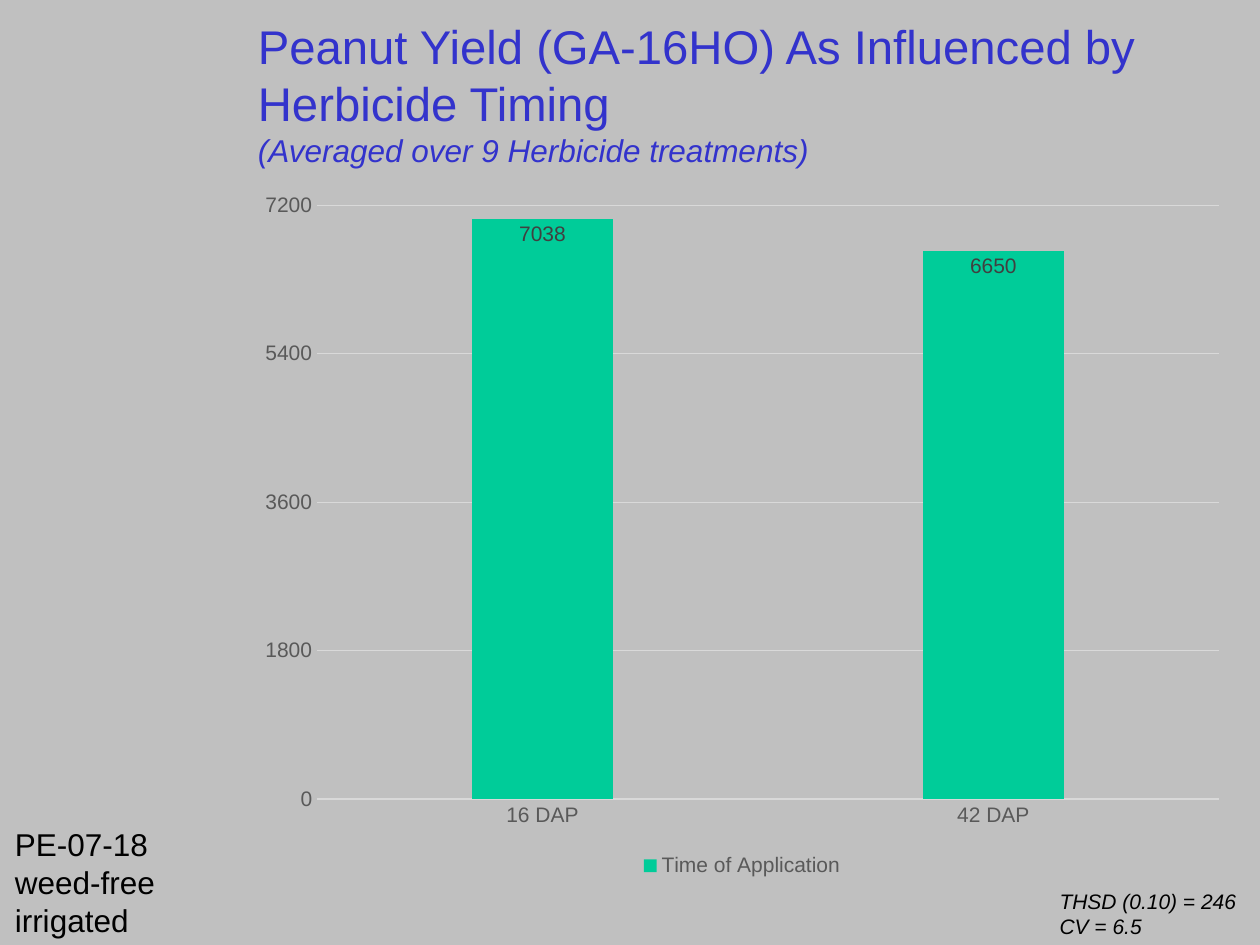
from pptx import Presentation
from pptx.chart.data import CategoryChartData
from pptx.dml.color import RGBColor
from pptx.enum.chart import XL_CHART_TYPE, XL_LABEL_POSITION, XL_LEGEND_POSITION, XL_TICK_MARK
from pptx.enum.text import MSO_ANCHOR, MSO_AUTO_SIZE
from pptx.util import Cm, Pt

GREY = RGBColor(0xC0, 0xC0, 0xC0)
BLUE = RGBColor(0x33, 0x33, 0xCC)
BLACK = RGBColor(0x00, 0x00, 0x00)
GREEN = RGBColor(0x00, 0xCC, 0x99)
GRID = RGBColor(0xD9, 0xD9, 0xD9)
AXIS_TEXT = RGBColor(0x59, 0x59, 0x59)
LABEL_TEXT = RGBColor(0x40, 0x40, 0x40)

TITLE_BOX = (4.95, 0.28, 20.24, 3.18)
CHART_BOX = (4.95, 3.63, 20.02, 14.15)
TRIAL_BOX = (0.05, 16.51, 3.38, 2.57)
STATS_BOX = (21.11, 17.78, 4.11, 1.27)


def set_font(font, size, color, **formats):
    font.color.rgb = color
    for name, value in {"name": "Arial", "size": Pt(size), **formats}.items():
        setattr(font, name, value)


def add_run(p, text, size, color, **formats):
    r = p.add_run()
    r.text = text
    set_font(r.font, size, color, **formats)


def add_title(s, box, heading, subtitle):
    tf = s.shapes.add_textbox(*map(Cm, box)).text_frame
    tf.word_wrap = True
    tf.vertical_anchor = MSO_ANCHOR.MIDDLE
    p = tf.paragraphs[0]
    add_run(p, heading, 27, BLUE)
    p.add_line_break()
    add_run(p, subtitle, 18, BLUE, italic=True)


def add_note(s, box, lines, size, wrap=True, **formats):
    tf = s.shapes.add_textbox(*map(Cm, box)).text_frame
    tf.word_wrap = wrap
    tf.auto_size = MSO_AUTO_SIZE.SHAPE_TO_FIT_TEXT
    for i, line in enumerate(lines):
        p = tf.add_paragraph() if i else tf.paragraphs[0]
        add_run(p, line, size, BLACK, **formats)


def style_line(line):
    line.color.rgb = GRID
    line.width = Pt(0.75)


def style_axes(chart):
    for axis in (chart.category_axis, chart.value_axis):
        axis.major_tick_mark = axis.minor_tick_mark = XL_TICK_MARK.NONE
        set_font(axis.tick_labels.font, 12, AXIS_TEXT)
    style_line(chart.category_axis.format.line)
    value_axis = chart.value_axis
    value_axis.format.line.fill.background()
    value_axis.has_major_gridlines = True
    style_line(value_axis.major_gridlines.format.line)
    scale = {"minimum_scale": 0, "maximum_scale": 7200, "major_unit": 1800}
    for name, value in scale.items():
        setattr(value_axis, name, value)


def add_yield_chart(s, box):
    data = CategoryChartData()
    data.categories = ["16 DAP", "42 DAP"]
    data.add_series("Time of Application", [7038, 6650])
    chart = s.shapes.add_chart(XL_CHART_TYPE.COLUMN_CLUSTERED, *map(Cm, box), data).chart
    set_font(chart.font, 10, BLACK)
    chart.has_title = False
    chart.has_legend = True
    chart.legend.position = XL_LEGEND_POSITION.BOTTOM
    chart.legend.include_in_layout = False
    set_font(chart.legend.font, 12, AXIS_TEXT)
    style_axes(chart)

    plot = chart.plots[0]
    for name, value in {"gap_width": 219, "overlap": -27, "vary_by_categories": False}.items():
        setattr(plot, name, value)
    series = plot.series[0]
    series.format.fill.solid()
    series.format.fill.fore_color.rgb = GREEN
    labels = series.data_labels
    labels.show_value = True
    labels.position = XL_LABEL_POSITION.INSIDE_END
    set_font(labels.font, 12, LABEL_TEXT)


def main():
    prs = Presentation()
    prs.slide_width, prs.slide_height = Cm(25.4), Cm(19.05)
    s = prs.slides.add_slide(prs.slide_layouts[6])
    s.background.fill.solid()
    s.background.fill.fore_color.rgb = GREY

    add_title(s, TITLE_BOX, "Peanut Yield (GA-16HO) As Influenced by Herbicide Timing",
              "(Averaged over 9 Herbicide treatments)")
    add_yield_chart(s, CHART_BOX)
    add_note(s, TRIAL_BOX, ["PE-07-18", "weed-free", "irrigated"], 18)
    add_note(s, STATS_BOX, ["THSD (0.10) = 246", "CV = 6.5"], 12, wrap=False, italic=True)
    prs.save("out.pptx")


if __name__ == "__main__":
    main()
